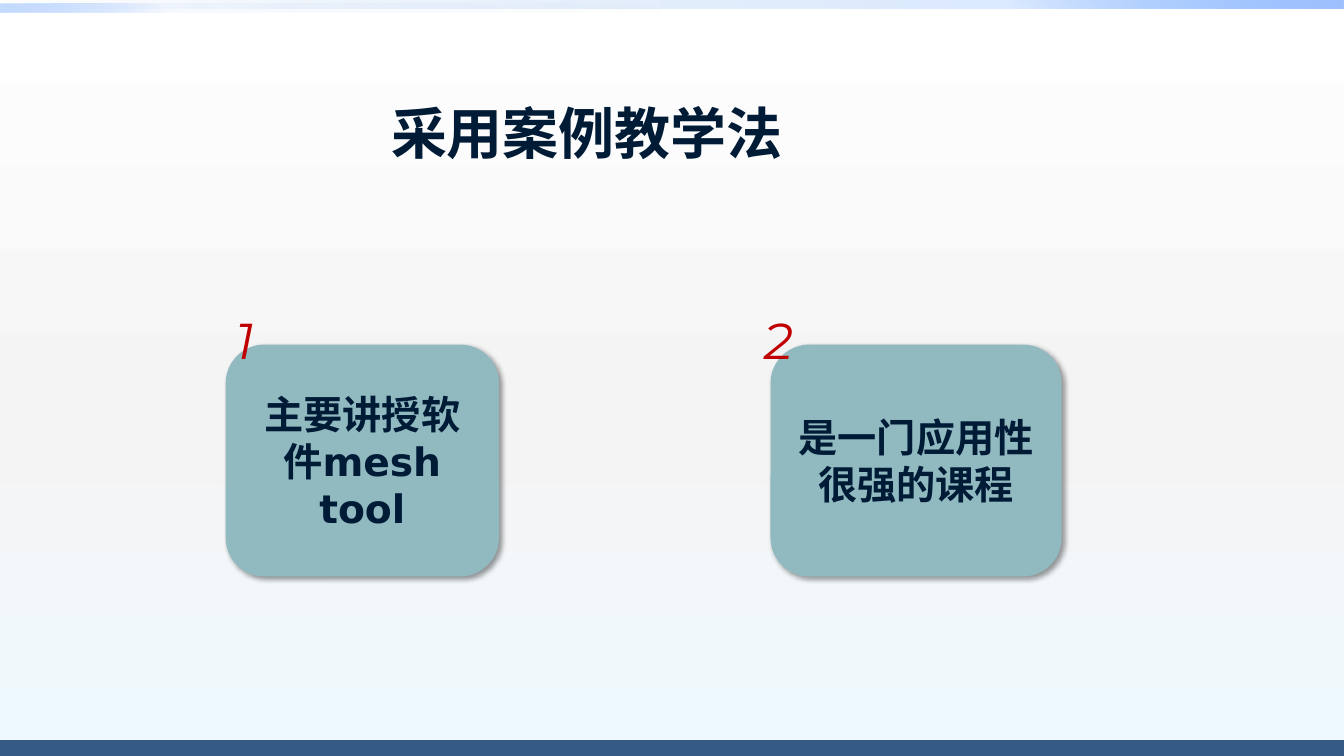
import pptx
import pptx.dml.color
import pptx.enum.shapes
import pptx.enum.text
import pptx.oxml
import pptx.oxml.ns
import pptx.util

RGBColor = pptx.dml.color.RGBColor
Shapes = pptx.enum.shapes.MSO_SHAPE
Align = pptx.enum.text.PP_ALIGN
Anchor = pptx.enum.text.MSO_ANCHOR

WHITE = RGBColor(0xFF, 0xFF, 0xFF)
GREY = RGBColor(0xF4, 0xF4, 0xF4)
ICE = RGBColor(0xEE, 0xF9, 0xFF)
DEEP_BLUE = RGBColor(0x00, 0x58, 0xB7)
BLUE = RGBColor(0x4F, 0x95, 0xFF)
LIGHT_BLUE = RGBColor(0x9E, 0xC2, 0xFF)
FOOTER_FILL = RGBColor(0x35, 0x5B, 0x85)
FOOTER_LINE = RGBColor(0x35, 0x5A, 0x83)
TEAL = RGBColor(0x91, 0xB9, 0xC0)
NAVY = RGBColor(0x00, 0x1B, 0x36)
RED = RGBColor(0xC0, 0x00, 0x00)
BLACK = RGBColor(0x00, 0x00, 0x00)

COLUMNS, ROWS = 24, 24


def write_text(shape, text, font="DejaVu Sans", size=28, color=NAVY,
               bold=False, italic=False, align=Align.CENTER, anchor=Anchor.MIDDLE):
    frame = shape.text_frame
    frame.word_wrap = True
    frame.vertical_anchor = anchor
    paragraph = frame.paragraphs[0]
    paragraph.alignment = align
    run = paragraph.add_run()
    run.text = text
    run.font.name = font
    run.font.size = pptx.util.Pt(size)
    run.font.color.rgb = color
    run.font.bold = bold
    run.font.italic = italic


def color_xml(color, opacity):
    return f'<a:srgbClr val="{color}"><a:alpha val="{opacity * 1000}"/></a:srgbClr>'


def set_gradient(fill, element, stops, angle):
    """Fill with (position, colour, opacity) stops, all in percent."""
    fill.gradient()
    stops_xml = "".join(
        f'<a:gs pos="{position * 1000}">{color_xml(color, opacity)}</a:gs>'
        for position, color, opacity in stops)
    gradient = pptx.oxml.parse_xml(
        f'<a:gradFill {pptx.oxml.ns.nsdecls("a")} rotWithShape="1">'
        f'<a:gsLst>{stops_xml}</a:gsLst>'
        f'<a:lin ang="{angle * 60000}" scaled="0"/></a:gradFill>')
    current = element.xpath(".//a:gradFill")[0]
    current.getparent().replace(current, gradient)


class CaseSlide:
    def __init__(self, presentation):
        self.column = presentation.slide_width / COLUMNS
        self.row = presentation.slide_height / ROWS
        self.slide = presentation.slides.add_slide(presentation.slide_layouts[5])

    def place(self, left, top, width, height):
        return (round(left * self.column), round(top * self.row),
                round(width * self.column), round(height * self.row))

    def background(self, stops):
        set_gradient(self.slide.background.fill, self.slide.element, stops, 90)

    def title(self, text, *box):
        title = self.slide.shapes.title
        title.left, title.top, title.width, title.height = self.place(*box)
        write_text(title, text, font="Roboto", size=40, bold=True)

    def block(self, *box, kind=Shapes.RECTANGLE, parent=None):
        shapes = (parent or self.slide).shapes
        shape = shapes.add_shape(kind, *self.place(*box))
        shape.shadow.inherit = False
        shape.line.fill.background()
        return shape

    def gradient_bar(self, *box, stops, angle):
        bar = self.block(*box)
        set_gradient(bar.fill, bar.element, stops, angle)

    def footer(self, *box):
        bar = self.block(*box)
        bar.fill.solid()
        bar.fill.fore_color.rgb = FOOTER_FILL
        bar.line.color.rgb = FOOTER_LINE
        bar.line.width = pptx.util.Pt(2)

    def card(self, number, text, card_box, number_box):
        group = self.slide.shapes.add_group_shape()
        card = self.block(*card_box, kind=Shapes.ROUNDED_RECTANGLE, parent=group)
        card.fill.solid()
        card.fill.fore_color.rgb = TEAL
        card.element.xpath(".//a:effectLst")[0].append(pptx.oxml.parse_xml(
            f'<a:outerShdw {pptx.oxml.ns.nsdecls("a")} blurRad="{pptx.util.Pt(4)}" '
            f'dist="{pptx.util.Pt(3)}" dir="{45 * 60000}" algn="tl" rotWithShape="0">'
            f'{color_xml(BLACK, 40)}</a:outerShdw>'))
        write_text(card, text, bold=True)

        label = group.shapes.add_textbox(*self.place(*number_box))
        label.text_frame.auto_size = pptx.enum.text.MSO_AUTO_SIZE.SHAPE_TO_FIT_TEXT
        write_text(label, str(number), font="Montserrat", size=36, color=RED,
                   italic=True, align=Align.LEFT, anchor=Anchor.TOP)


def main():
    presentation = pptx.Presentation()
    presentation.slide_width = pptx.util.Inches(13.33)
    presentation.slide_height = pptx.util.Inches(7.5)
    page = CaseSlide(presentation)

    # Background and bars along the edges
    page.background([(0, WHITE, 100), (55, GREY, 100), (100, ICE, 100)])
    page.gradient_bar(0, 0, COLUMNS, 0.26, angle=315, stops=[
        (0, DEEP_BLUE, 0), (75, BLUE, 20), (100, LIGHT_BLUE, 100)])
    page.gradient_bar(0, 0.13, COLUMNS / 2, 0.26, angle=135, stops=[
        (0, DEEP_BLUE, 0), (75, BLUE, 5), (100, LIGHT_BLUE, 60)])
    page.footer(0, 23.55, COLUMNS, 0.9)

    # Title
    page.title("采用案例教学法", 1, 1.82, 18.96, 4.77)

    # Numbered cards: text, card left and width, number left, width and height
    cards = [("主要讲授软件mesh tool", 4.03, 4.88, 4.03, 1.44, 3.46),
             ("是一门应用性很强的课程", 13.76, 5.2, 13.47, 0.76, 2.27)]
    for number, (text, left, width, number_left, number_width, number_height) in enumerate(cards, 1):
        page.card(number, text, (left, 10.94, width, 7.36),
                  (number_left, 9.66, number_width, number_height))

    presentation.save("out.pptx")


if __name__ == "__main__":
    main()
